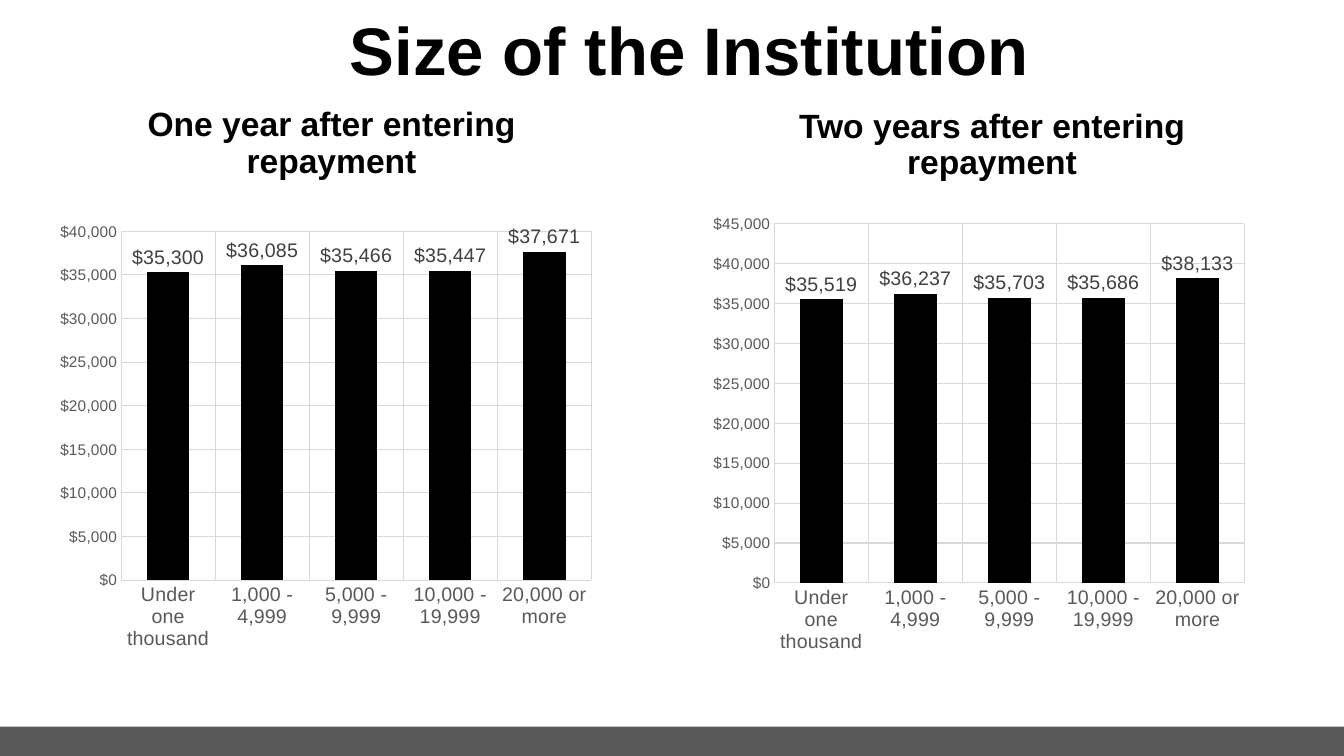
from pptx import Presentation
from pptx.chart import data as chart_data
from pptx.dml.color import RGBColor
from pptx.enum import chart as ch, shapes, text
from pptx.util import Cm, Pt

BLACK = RGBColor(0x00, 0x00, 0x00)
BAND_GREY = RGBColor(0x59, 0x59, 0x59)
LABEL_GREY = RGBColor(0x40, 0x40, 0x40)
GRID_GREY = RGBColor(0xD9, 0xD9, 0xD9)
FONT = "Arial"
DOLLARS = '"$"#,##0'
SLIDE_SIZE = (33.87, 19.05)
BAND_HEIGHT = 0.74

TITLE = ("Size of the Institution", (1.55, 0.28, 31.65, 2.16))
SIZES = ["Under one thousand", "1,000 - 4,999", "5,000 - 9,999",
         "10,000 - 19,999", "20,000 or more"]
PANELS = [
    {"heading": "One year after entering repayment",
     "heading_box": (1.55, 2.44, 13.61, 2.39),
     "chart_box": (1.24, 5.38, 13.94, 11.23),
     "balances": (35300, 36085, 35466, 35447, 37671),
     "top": 40000},
    {"heading": "Two years after entering repayment",
     "heading_box": (17.7, 2.59, 14.6, 2.16),
     "chart_box": (17.7, 5.18, 13.94, 11.51),
     "balances": (35519, 36237, 35703, 35686, 38133),
     "top": 45000},
]


def apply(target, **values):
    """Set each named attribute on the target."""
    for name, value in values.items():
        setattr(target, name, value)


def set_font(font, size, color, bold=False):
    """Give a font its face, size, weight and colour."""
    apply(font, name=FONT, size=Pt(size), bold=bold)
    font.color.rgb = color


def write(holder, words, box, size):
    """Place a centred bold line of text in the given box."""
    apply(holder, **dict(zip(("left", "top", "width", "height"), map(Cm, box))))
    frame = holder.text_frame
    apply(frame, text=words, word_wrap=True, auto_size=text.MSO_AUTO_SIZE.NONE,
          vertical_anchor=text.MSO_ANCHOR.MIDDLE)
    line = frame.paragraphs[0]
    apply(line, alignment=text.PP_ALIGN.CENTER, line_spacing=0.9)
    set_font(line.runs[0].font, size, BLACK, True)


def style_axis(axis, size):
    """Give an axis its grid, labels and lack of ticks."""
    apply(axis, has_major_gridlines=True, major_tick_mark=ch.XL_TICK_MARK.NONE,
          minor_tick_mark=ch.XL_TICK_MARK.NONE)
    set_font(axis.tick_labels.font, size, BAND_GREY)
    grid = axis.major_gridlines.format.line
    grid.color.rgb = GRID_GREY
    grid.width = Pt(0.75)


def add_balances(slide, panel):
    """Draw the column chart of one panel."""
    source = chart_data.CategoryChartData(number_format=DOLLARS)
    source.categories = SIZES
    source.add_series("Series 1", panel["balances"])
    chart = slide.shapes.add_chart(ch.XL_CHART_TYPE.COLUMN_CLUSTERED,
                                   *map(Cm, panel["chart_box"]), source).chart
    apply(chart, has_legend=False, has_title=False)
    set_font(chart.font, 10, BLACK)

    sizes, dollars = chart.category_axis, chart.value_axis
    style_axis(sizes, 14)
    style_axis(dollars, 11)
    sizes.format.line.color.rgb = GRID_GREY
    sizes.format.line.width = Pt(0.75)
    dollars.format.line.fill.background()
    apply(dollars, minimum_scale=0, maximum_scale=panel["top"], major_unit=5000)
    apply(dollars.tick_labels, number_format=DOLLARS,
          number_format_is_linked=False)

    columns = chart.plots[0]
    apply(columns, gap_width=121, overlap=-27, vary_by_categories=False,
          has_data_labels=True)
    apply(columns.data_labels, show_value=True, number_format=DOLLARS,
          number_format_is_linked=False,
          position=ch.XL_LABEL_POSITION.OUTSIDE_END)
    set_font(columns.data_labels.font, 14, LABEL_GREY)
    fill = columns.series[0].format.fill
    fill.solid()
    fill.fore_color.rgb = BLACK


def main():
    """Build the slide on loan balances by institution size."""
    deck = Presentation()
    width, height = map(Cm, SLIDE_SIZE)
    apply(deck, slide_width=width, slide_height=height)
    slide = deck.slides.add_slide(deck.slide_layouts[5])

    band = slide.shapes.add_shape(shapes.MSO_SHAPE.RECTANGLE, 0,
                                  height - Cm(BAND_HEIGHT), width,
                                  Cm(BAND_HEIGHT))
    band.shadow.inherit = False
    band.fill.solid()
    band.fill.fore_color.rgb = BAND_GREY
    band.line.fill.background()

    write(slide.shapes.title, *TITLE, 48)
    for panel in PANELS:
        heading = slide.shapes.add_textbox(0, 0, 0, 0)
        write(heading, panel["heading"], panel["heading_box"], 24)
        add_balances(slide, panel)
    deck.save("out.pptx")


if __name__ == "__main__":
    main()
